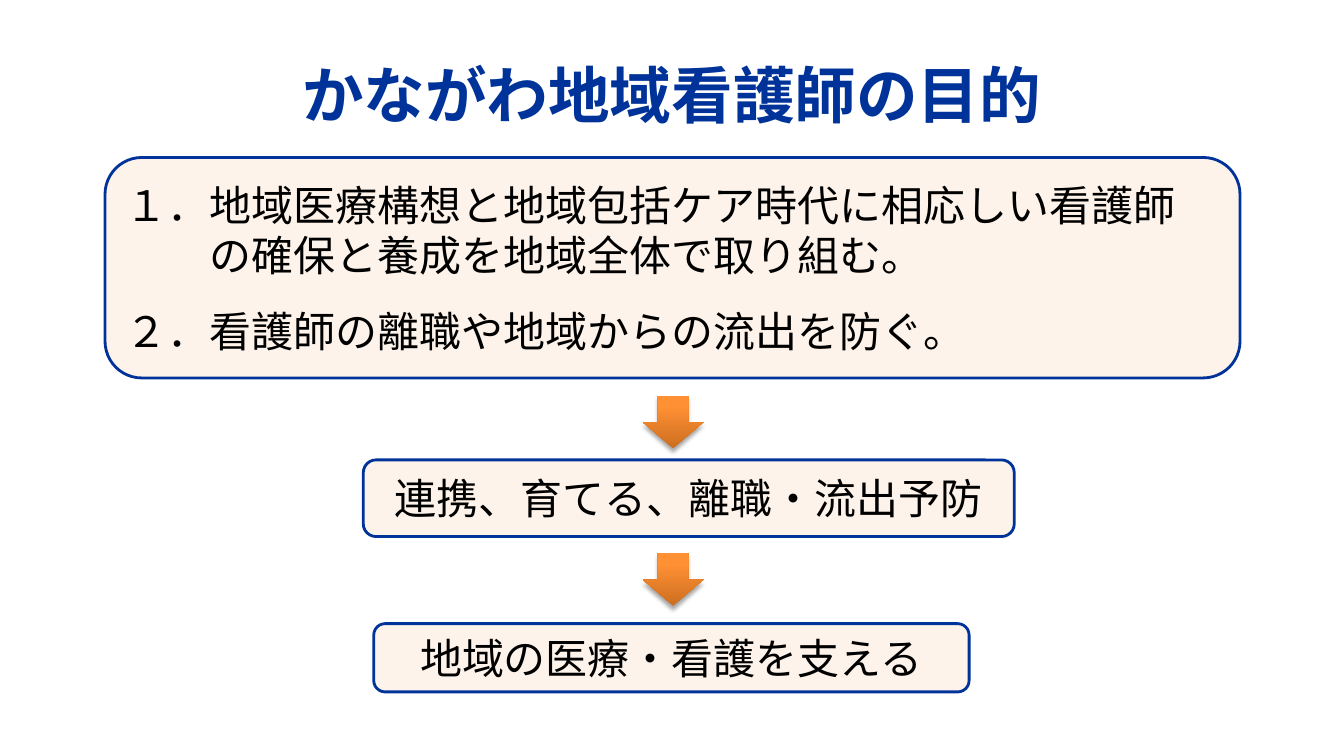
import lxml.etree
import pptx
import pptx.dml.color
import pptx.enum.shapes
import pptx.enum.text
import pptx.oxml
import pptx.oxml.ns
import pptx.util

PX = 9525  # EMU per px, 96 px to the inch
FONT = "Karla"
COLORS = {
    "navy": "003399",
    "cream": "FDEADA",
    "black": "000000",
    "arrow_low": "CC6E20",
    "arrow_mid": "FF9034",
    "arrow_top": "FF9136",
}
NAMESPACE = pptx.oxml.ns.nsdecls("a")
SHAPES = pptx.enum.shapes.MSO_SHAPE
CENTER = pptx.enum.text.PP_ALIGN.CENTER
LEFT = pptx.enum.text.PP_ALIGN.LEFT

deck = pptx.Presentation()
deck.slide_width = 1280 * PX
deck.slide_height = 720 * PX
page = deck.slides.add_slide(deck.slide_layouts[6])


def write_lines(box, lines, size, color, align, bold=False):
    """Each line is (text, left margin in px, line spacing)."""
    frame = box.text_frame
    frame.word_wrap = True
    frame.vertical_anchor = pptx.enum.text.MSO_ANCHOR.MIDDLE
    for index, (text, margin, spacing) in enumerate(lines):
        para = frame.add_paragraph() if index else frame.paragraphs[0]
        para.alignment = align
        para.line_spacing = spacing
        if margin:
            para._p.get_or_add_pPr().set("marL", str(margin * PX))
        span = para.add_run()
        span.text = text
        span.font.size = pptx.util.Pt(size)
        span.font.bold = bold
        span.font.name = FONT
        span.font.color.rgb = pptx.dml.color.RGBColor.from_string(COLORS[color])
        east_asian = pptx.oxml.parse_xml(f'<a:ea {NAMESPACE} typeface="{FONT}"/>')
        span.font._element.find(pptx.oxml.ns.qn("a:latin")).addnext(east_asian)


# Title
title = page.shapes.add_textbox(64 * PX, 29 * PX, 1152 * PX, 120 * PX)
write_lines(title, [("かながわ地域看護師の目的", 0, 1.0)], 44, "navy", CENTER, True)

# Rounded panels: purposes, actions, outcome
purposes = [
    ("１．地域医療構想と地域包括ケア時代に相応しい看護師", 0, 1.0),
    ("の確保と養成を地域全体で取り組む。", 80, 1.0),
    ("２．看護師の離職や地域からの流出を防ぐ。", 0, 1.5),
]
panels = [
    (100, 150, 1081, 210, LEFT, purposes),
    (346, 438, 620, 73, CENTER, [("連携、育てる、離職・流出予防", 0, 1.0)]),
    (356, 594, 567, 65, CENTER, [("地域の医療・看護を支える", 0, 1.0)]),
]
for left, top, width, height, align, lines in panels:
    panel = page.shapes.add_shape(
        SHAPES.ROUNDED_RECTANGLE, left * PX, top * PX, width * PX, height * PX)
    panel.shadow.inherit = False
    panel.fill.solid()
    panel.fill.fore_color.rgb = pptx.dml.color.RGBColor.from_string(COLORS["cream"])
    fill_color = panel._element.spPr.find(
        pptx.oxml.ns.qn("a:solidFill") + "/" + pptx.oxml.ns.qn("a:srgbClr"))
    lxml.etree.SubElement(fill_color, pptx.oxml.ns.qn("a:alpha"), val="55000")
    panel.line.color.rgb = pptx.dml.color.RGBColor.from_string(COLORS["navy"])
    panel.line.width = pptx.util.Pt(2)
    write_lines(panel, lines, 30, "black", align)

# Down arrows between the panels, with gradient and soft shadow
stops = "".join(
    f'<a:gs pos="{position * 1000}"><a:srgbClr val="{COLORS[name]}"/></a:gs>'
    for position, name in [(0, "arrow_low"), (80, "arrow_mid"), (100, "arrow_top")])
gradient_xml = (
    f'<a:gradFill {NAMESPACE} rotWithShape="1"><a:gsLst>{stops}</a:gsLst>'
    '<a:lin ang="16200000" scaled="0"/></a:gradFill>')
shadow_xml = (
    f'<a:outerShdw {NAMESPACE} blurRad="38100" dist="38100" dir="5400000" '
    f'rotWithShape="0"><a:srgbClr val="{COLORS["black"]}">'
    '<a:alpha val="35000"/></a:srgbClr></a:outerShdw>')
for top in (377, 527):
    arrow = page.shapes.add_shape(
        SHAPES.DOWN_ARROW, 612 * PX, top * PX, 58 * PX, 50 * PX)
    arrow.line.fill.background()
    arrow.shadow.inherit = False
    properties = arrow._element.spPr
    properties.find(pptx.oxml.ns.qn("a:prstGeom")).addnext(
        pptx.oxml.parse_xml(gradient_xml))
    properties.find(pptx.oxml.ns.qn("a:effectLst")).append(
        pptx.oxml.parse_xml(shadow_xml))

deck.save("out.pptx")
